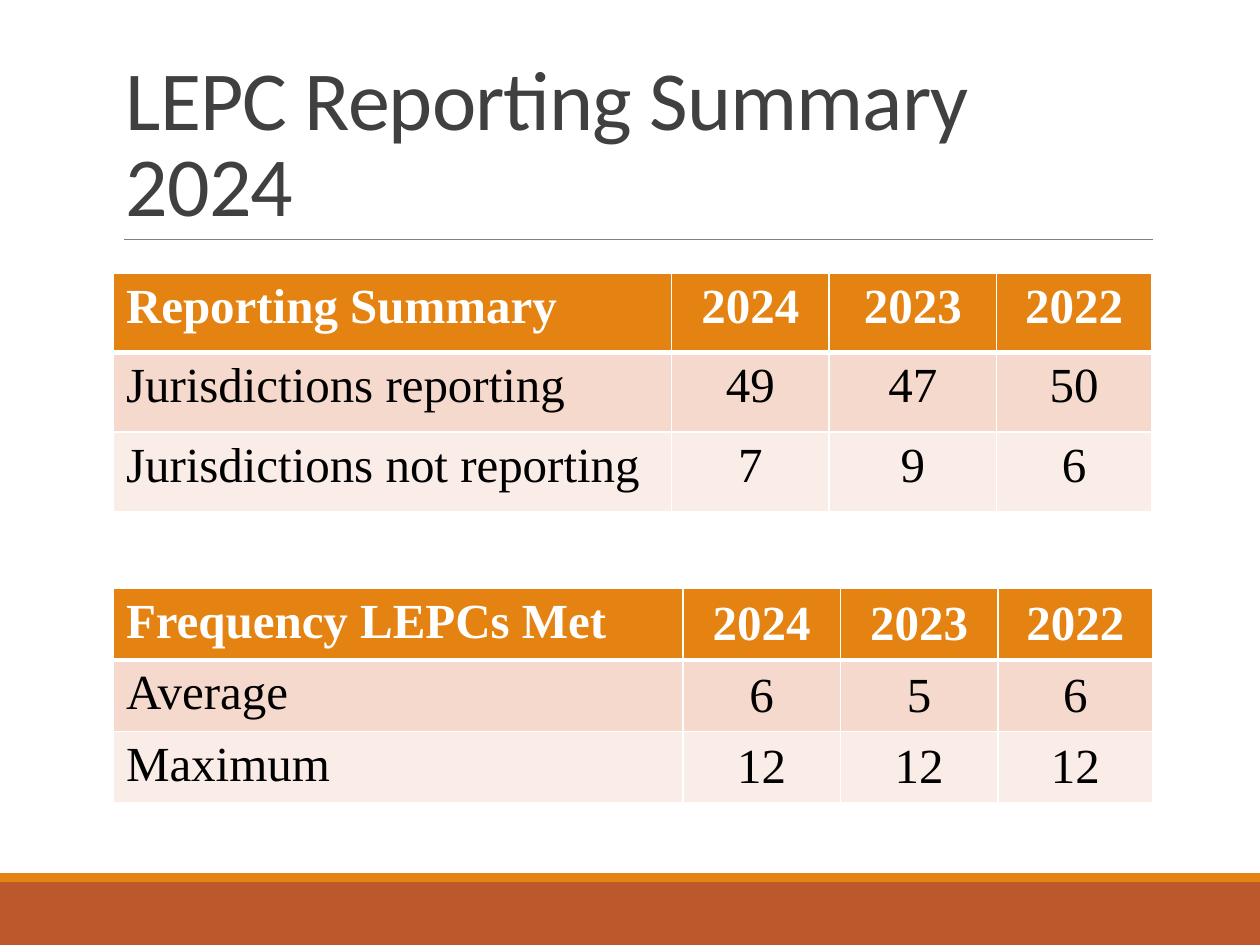
from lxml.etree import SubElement
from pptx import Presentation
from pptx.dml.color import RGBColor
from pptx.enum.shapes import MSO_CONNECTOR, MSO_SHAPE
from pptx.enum.text import MSO_ANCHOR as Anchor, PP_ALIGN as Align
from pptx.oxml.ns import qn
from pptx.util import Inches, Pt

WHITE = RGBColor(0xFF, 0xFF, 0xFF)
BLACK = RGBColor(0, 0, 0)
ORANGE = RGBColor(0xE4, 0x83, 0x12)
RUST = RGBColor(0xBD, 0x58, 0x2C)
GRAY = RGBColor(0x80, 0x80, 0x80)
CHARCOAL = RGBColor(0x40, 0x40, 0x40)
BANDS = [RGBColor(0xF5, 0xD9, 0xCC), RGBColor(0xFA, 0xED, 0xE7)]

SLIDE_W, SLIDE_H = 10, 7.5
LEFT, WIDTH = 0.9, 8.25  # content column shared by title and tables

REPORTING = [
    ("Reporting Summary", "2024", "2023", "2022"),
    ("Jurisdictions reporting", "49", "47", "50"),
    ("Jurisdictions not reporting", "7", "9", "6"),
]
MEETINGS = [
    ("Frequency LEPCs Met", "2024", "2023", "2022"),
    ("Average", "6", "5", "6"),
    ("Maximum", "12", "12", "12"),
]


def add_footer(slide, box):
    """Rust band with a thin orange strip along its top."""
    left, top, width, height = box
    strip = height / 8
    for color, y, h in ((RUST, top + strip, height - strip), (ORANGE, top, strip)):
        band = slide.shapes.add_shape(
            MSO_SHAPE.RECTANGLE, Inches(left), Inches(y), Inches(width), Inches(h))
        band.shadow.inherit = False
        band.fill.solid()
        band.fill.fore_color.rgb = color
        band.line.fill.background()


def add_title(slide, box, lines):
    """Bottom-anchored title with a rule under it."""
    left, top, width, height = box
    title = slide.shapes.add_textbox(*map(Inches, box))
    frame = title.text_frame
    frame.word_wrap = True
    frame.vertical_anchor = Anchor.BOTTOM
    paragraph = frame.paragraphs[0]
    paragraph.line_spacing = 0.85
    for i, line in enumerate(lines):
        if i:
            paragraph.add_line_break()
        run = paragraph.add_run()
        run.text = line
        run.font.name, run.font.size = "Calibri", Pt(48)
        run.font.color.rgb = CHARCOAL
        run.font._element.set("spc", "-50")

    bottom = Inches(top + height)
    rule = slide.shapes.add_connector(
        MSO_CONNECTOR.STRAIGHT, Inches(left + width / 100), bottom,
        Inches(left + width), bottom)
    rule.line.color.rgb = GRAY
    rule.line.width = Pt(0.5)
    SubElement(rule._element.spPr, qn("a:effectLst"))


def add_borders(cell, widths):
    """White cell borders; widths maps an edge letter to points."""
    properties = cell._tc.get_or_add_tcPr()
    for edge, points in widths.items():
        border = SubElement(properties, qn(f"a:ln{edge}"), w=str(Pt(points)))
        fill = SubElement(border, qn("a:solidFill"))
        SubElement(fill, qn("a:srgbClr"), val=str(WHITE))


def add_summary_table(slide, box, rows, col_widths, row_heights, value_anchor):
    """Orange header over banded rows: a label, then centred values."""
    table = slide.shapes.add_table(
        len(rows), len(col_widths), *map(Inches, box)).table
    for column, width in zip(table.columns, col_widths):
        column.width = Inches(width)
    for row, height in zip(table.rows, row_heights):
        row.height = Inches(height)

    for r, texts in enumerate(rows):
        header = r == 0
        for c, text in enumerate(texts):
            cell = table.cell(r, c)
            top, bottom = (3 if r == 1 else 1), (3 if header else 1)
            add_borders(cell, {"L": 1, "R": 1, "T": top, "B": bottom})
            cell.fill.solid()
            cell.fill.fore_color.rgb = ORANGE if header else BANDS[(r - 1) % 2]
            cell.vertical_anchor = value_anchor if c else Anchor.TOP
            paragraph = cell.text_frame.paragraphs[0]
            paragraph.alignment = Align.CENTER if c else Align.LEFT
            run = paragraph.add_run()
            run.text = text
            run.font.name, run.font.size = "Times New Roman", Pt(28)
            run.font.bold = header
            run.font.color.rgb = WHITE if header else BLACK


def main():
    prs = Presentation()
    prs.slide_width, prs.slide_height = Inches(SLIDE_W), Inches(SLIDE_H)
    slide = prs.slides.add_slide(prs.slide_layouts[6])

    footer_h = 0.57
    add_footer(slide, (0, SLIDE_H - footer_h, SLIDE_W, footer_h))
    add_title(slide, (LEFT, 0.31, WIDTH, 1.59), ["LEPC Reporting Summary", "2024"])
    add_summary_table(slide, (LEFT, 2.17, WIDTH, 1.89), REPORTING,
                      (4.43, 1.25, 1.33, 1.23), [0.63] * 3, Anchor.TOP)
    add_summary_table(slide, (LEFT, 4.67, WIDTH, 1.63), MEETINGS,
                      (4.52, 1.25, 1.25, 1.23), (0.53, 0.55, 0.55), Anchor.MIDDLE)
    prs.save("out.pptx")


if __name__ == "__main__":
    main()
